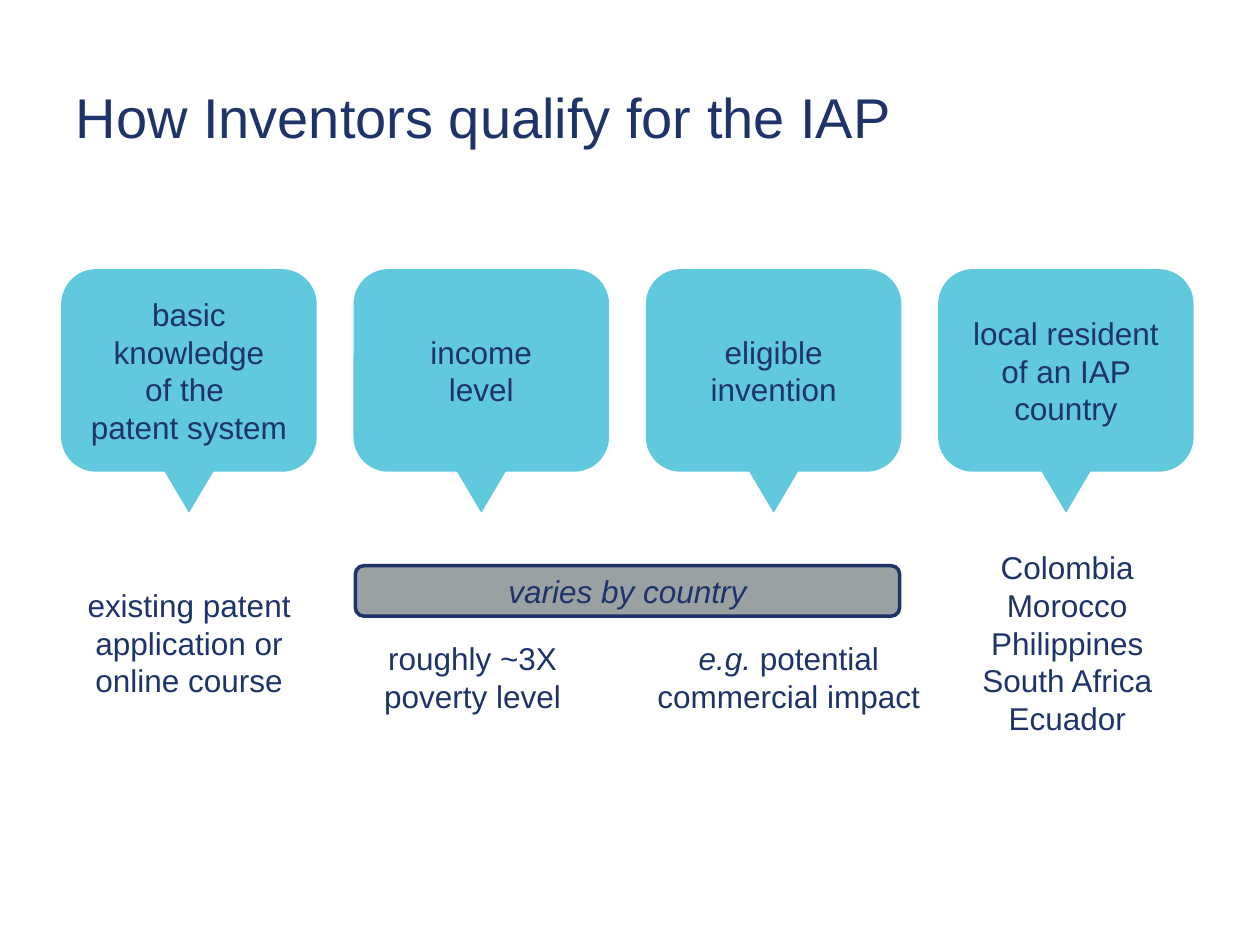
from dataclasses import dataclass

from pptx import Presentation
from pptx.dml.color import RGBColor
from pptx.enum.shapes import MSO_SHAPE as Shape
from pptx.enum.text import MSO_ANCHOR as Anchor, MSO_AUTO_SIZE as AutoSize, PP_ALIGN as Align
from pptx.util import Inches, Pt


@dataclass(frozen=True)
class Theme:
    font: str = "Arial"
    navy: RGBColor = RGBColor(0x1E, 0x33, 0x69)
    aqua: RGBColor = RGBColor(0x60, 0xC9, 0xDD)
    gray: RGBColor = RGBColor(0x9A, 0xA1, 0xA2)
    title_size: int = 32
    body_size: int = 18
    outline: float = 2
    pointer_outline: float = 0.75


class SlideBuilder:
    def __init__(self, slide, theme):
        self.slide = slide
        self.theme = theme

    def add_text(self, frame, runs, size, align=Align.CENTER):
        """Fill one paragraph from (text, italic) runs; a newline is a line break."""
        frame.word_wrap = True
        paragraph = frame.paragraphs[0]
        paragraph.alignment = align
        for text, italic in runs:
            for index, line in enumerate(text.split("\n")):
                if index:
                    paragraph.add_line_break()
                run = paragraph.add_run()
                run.text = line
                run.font.name = self.theme.font
                run.font.size = Pt(size)
                run.font.italic = italic
                run.font.color.rgb = self.theme.navy

    def title(self, text, left, top, width, height):
        title = self.slide.shapes.title
        title.left, title.top = Inches(left), Inches(top)
        title.width, title.height = Inches(width), Inches(height)
        title.text_frame.vertical_anchor = Anchor.MIDDLE
        self.add_text(title.text_frame, [(text, False)], self.theme.title_size, Align.LEFT)

    def group(self):
        return self.slide.shapes.add_group_shape().shapes

    def shape(self, shapes, kind, box, fill, line, line_width):
        shape = shapes.add_shape(kind, *map(Inches, box))
        shape.shadow.inherit = False
        shape.fill.solid()
        shape.fill.fore_color.rgb = fill
        shape.line.color.rgb = line
        shape.line.width = Pt(line_width)
        return shape

    def label(self, shape, text, italic=False):
        shape.text_frame.vertical_anchor = Anchor.MIDDLE
        self.add_text(shape.text_frame, [(text, italic)], self.theme.body_size)

    def callout(self, text, left, top, width, height):
        """Draw a rounded box with a pointer centred below it."""
        theme = self.theme
        shapes = self.group()
        box = self.shape(shapes, Shape.ROUNDED_RECTANGLE, (left, top, width, height),
                         theme.aqua, theme.aqua, theme.outline)
        self.label(box, text)
        pointer_width, pointer_height = 0.39, 0.33
        pointer_box = (left + (width - pointer_width) / 2, top + height,
                       pointer_width, pointer_height)
        pointer = self.shape(shapes, Shape.ISOSCELES_TRIANGLE, pointer_box,
                             theme.aqua, theme.aqua, theme.pointer_outline)
        pointer.rotation = 180

    def banner(self, shapes, text, box):
        theme = self.theme
        banner = self.shape(shapes, Shape.ROUNDED_RECTANGLE, box,
                            theme.gray, theme.navy, theme.outline)
        self.label(banner, text, italic=True)

    def note(self, shapes, runs, left, top, height, width=2.42):
        frame = shapes.add_textbox(*map(Inches, (left, top, width, height))).text_frame
        self.add_text(frame, runs, self.theme.body_size)
        frame.auto_size = AutoSize.SHAPE_TO_FIT_TEXT


def main():
    presentation = Presentation()
    presentation.slide_width, presentation.slide_height = Inches(10), Inches(7.5)
    slide = presentation.slides.add_slide(presentation.slide_layouts[5])
    builder = SlideBuilder(slide, Theme())

    builder.title("How Inventors qualify for the IAP", 0.5, 0.3, 9, 1.25)

    criteria = [
        "basic knowledge\nof the \npatent system",
        "income\nlevel",
        "eligible invention",
        "local resident of an IAP country",
    ]
    first_left, pitch, callout_width = 0.5, 2.32, 2
    for column, text in enumerate(criteria):
        builder.callout(text, first_left + column * pitch, 2.15, callout_width, 1.58)

    builder.note(slide.shapes, [("existing patent application or online course", False)],
                 0.29, 4.6, 1.01)

    by_country = builder.group()
    builder.note(by_country, [("roughly ~3X poverty level", False)], 2.54, 5.02, 0.71)
    builder.note(by_country, [("e.g.", True), (" potential commercial impact", False)],
                 5.05, 5.02, 0.71)
    builder.banner(by_country, "varies by country",
                   (first_left + pitch, 4.49, pitch + callout_width, 0.4))

    countries = ["Colombia", "Morocco", "Philippines", "South Africa", "Ecuador"]
    builder.note(slide.shapes, [("\n".join(countries), False)], 7.26, 4.3, 1.62)

    presentation.save("out.pptx")


if __name__ == "__main__":
    main()
